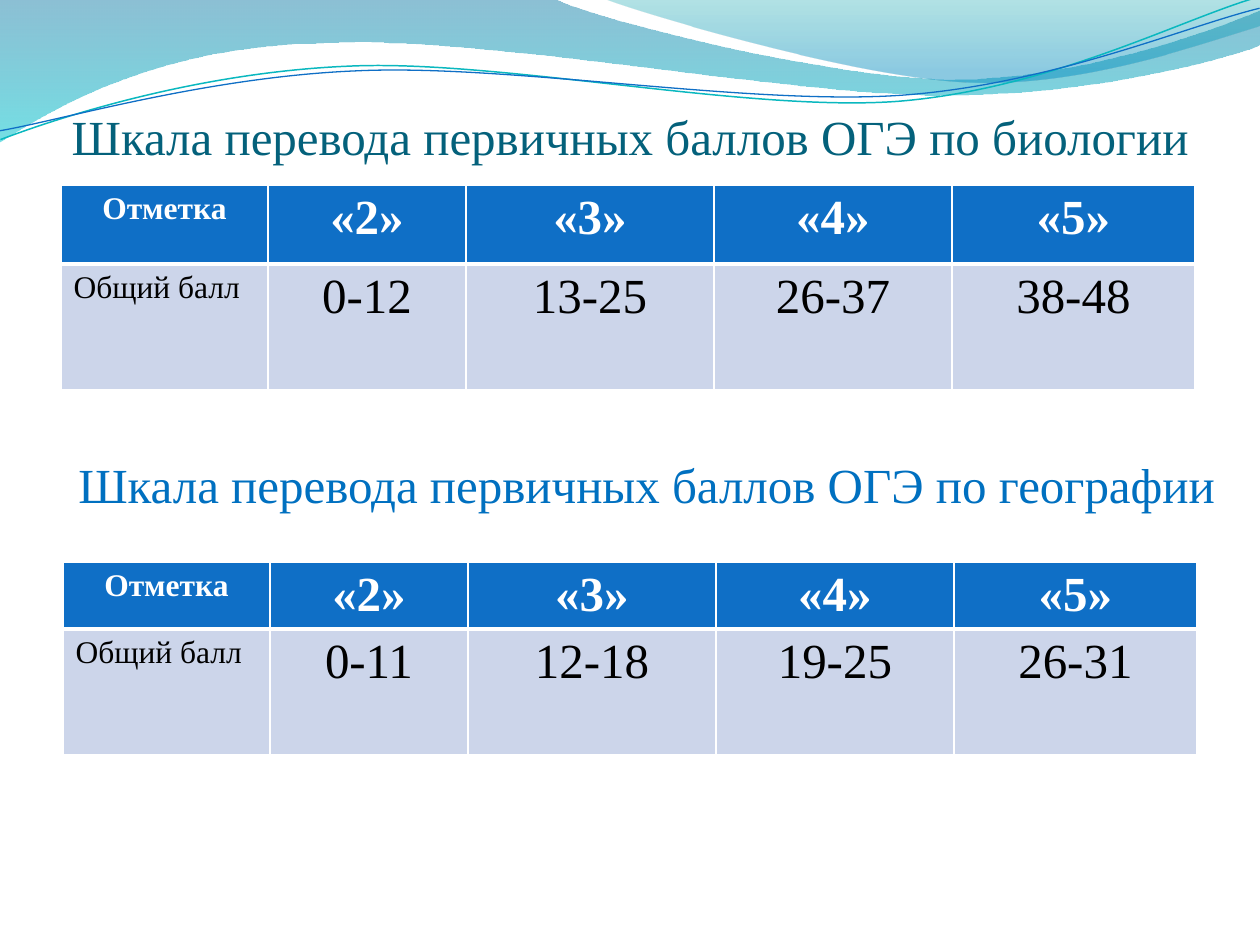
from lxml import etree
from pptx import Presentation
from pptx.dml.color import RGBColor
from pptx.enum.text import MSO_ANCHOR, MSO_AUTO_SIZE, PP_ALIGN
from pptx.oxml.ns import qn
from pptx.util import Pt

PX = 914400 / 126
CENTER, JUSTIFY = PP_ALIGN.CENTER, PP_ALIGN.JUSTIFY
BOTTOM = MSO_ANCHOR.BOTTOM
NO_AUTOFIT = MSO_AUTO_SIZE.NONE
FONT = "Times New Roman"
WHITE = RGBColor(0xFF, 0xFF, 0xFF)
BLACK = RGBColor(0, 0, 0)
BLUE = RGBColor(0x0F, 0x6F, 0xC6)
PALE_BLUE = RGBColor(0xCC, 0xD5, 0xEA)
DARK_TEAL = RGBColor(0x04, 0x61, 0x7B)
HEADING_BLUE = RGBColor(0x00, 0x70, 0xC0)
TURQUOISE = RGBColor(0x0A, 0xB8, 0xBF)
WAVE_TOP = RGBColor(0x00, 0x74, 0xA1)
WAVE_BOTTOM = RGBColor(0x00, 0xC6, 0xCF)
CREST_TOP = RGBColor(0x00, 0xA1, 0xA9)
CREST_BOTTOM = RGBColor(0x00, 0x8B, 0xBF)


def px(*lengths):
    return [round(length * PX) for length in lengths]


def add_run(paragraph, text, size, color, bold=False):
    run = paragraph.add_run()
    run.text = text
    run.font.name = FONT
    run.font.size = Pt(size)
    run.font.bold = bold
    run.font.color.rgb = color


presentation = Presentation()
presentation.slide_width, presentation.slide_height = px(1260, 945)
slide = presentation.slides.add_slide(presentation.slide_layouts[5])
shapes = slide.shapes

waves = [
    ((0, 0), [
        [(554, -1)],
        [(600, 21), (837, 79), (955, 79)],
        [(1075, 79), (1207, 33), (1260, 11)],
        [(1261, 45)],
        [(1239, 55), (1096, 96), (940, 95)],
        [(784, 95), (481, 35), (324, 43)],
        [(163, 45), (58, 105), (-1, 142)],
    ], [(0, WAVE_TOP, 45), (1, WAVE_BOTTOM, 55)], None),
    ((604, -1), [
        [(641, 14), (859, 78), (969, 82)],
        [(1086, 87), (1211, 40), (1260, 26)],
        [(1260, 0)],
    ], [(0, CREST_TOP, 30), (0.8, CREST_BOTTOM, 45)], None),
    ((-2, 110), [
        [(59, 90), (199, 52), (350, 53)],
        [(499, 53), (745, 118), (896, 114)],
        [(1049, 109), (1184, 45), (1260, 27)],
    ], None, (TURQUOISE, 0.85)),
    ((-2, 101), [
        [(57, 94), (207, 57), (357, 58)],
        [(509, 58), (750, 112), (902, 108)],
        [(1052, 104), (1189, 52), (1262, 38)],
    ], None, (BLUE, 0.75)),
]
for start, segments, stops, stroke in waves:
    points = [tuple(px(*point)) for segment in segments for point in segment]
    builder = shapes.build_freeform(*px(*start), scale=1.0)
    builder.add_line_segments(points, close=stops is not None)
    wave = builder.convert_to_shape()
    wave.shadow.inherit = False
    sides = iter(list(wave.element.spPr.iter(qn("a:lnTo"))))
    for segment in segments:
        side = next(sides)
        if len(segment) == 3:
            curve = etree.Element(qn("a:cubicBezTo"))
            side.addprevious(curve)
            for corner in (side, next(sides), next(sides)):
                curve.append(corner[0])
                corner.getparent().remove(corner)
    if stops:
        wave.line.fill.background()
        wave.fill.gradient()
        wave.fill.gradient_angle = 270
        for stop, (position, color, _) in zip(wave.fill.gradient_stops, stops):
            stop.position = position
            stop.color.rgb = color
        color_elements = wave.element.spPr.iter(qn("a:srgbClr"))
        for color_element, (_, _, opacity) in zip(color_elements, stops):
            etree.SubElement(color_element, qn("a:alpha"), val=str(opacity * 1000))
    else:
        wave.fill.background()
        wave.line.color.rgb, wave.line.width = stroke[0], Pt(stroke[1])
        wave.rotation = -2.7

title = shapes.title
title.element.getparent().append(title.element)
title.left, title.top, title.width, title.height = px(63, 96, 1134, 69)
frame = title.text_frame
frame.auto_size = NO_AUTOFIT
frame.word_wrap = True
frame.vertical_anchor = BOTTOM
frame.margin_left = frame.margin_right = frame.margin_bottom = 0
frame.margin_top = px(6)[0]
frame.paragraphs[0].alignment = CENTER
add_run(frame.paragraphs[0], "Шкала перевода первичных баллов ОГЭ по биологии", 28, DARK_TEAL)

header = ["Отметка", "«2»", "«3»", "«4»", "«5»"]
column_widths = px(207, 198, 248, 238, 243)
score_tables = [
    (61, 185, (79, 126), ["Общий балл", "0-12", "13-25", "26-37", "38-48"]),
    (63, 562, (66, 126), ["Общий балл", "0-11", "12-18", "19-25", "26-31"]),
]
for left, top, heights, scores in score_tables:
    table = shapes.add_table(2, 5, *px(left, top, 1134, sum(heights))).table
    for column, width in zip(table.columns, column_widths):
        column.width = width
    for row_index, texts in enumerate((header, scores)):
        is_header = row_index == 0
        table.rows[row_index].height = px(heights[row_index])[0]
        for column_index, text in enumerate(texts):
            cell = table.cell(row_index, column_index)
            properties = cell._tc.get_or_add_tcPr()
            for side in "LRTB":
                at_divider = side == ("B" if is_header else "T")
                border = etree.SubElement(
                    properties, qn(f"a:ln{side}"), w=str(Pt(3 if at_divider else 1)))
                border_fill = etree.SubElement(border, qn("a:solidFill"))
                etree.SubElement(border_fill, qn("a:srgbClr"), val=str(WHITE))
            cell.fill.solid()
            cell.fill.fore_color.rgb = BLUE if is_header else PALE_BLUE
            paragraph = cell.text_frame.paragraphs[0]
            is_label = column_index == 0
            paragraph.alignment = JUSTIFY if is_label and not is_header else CENTER
            add_run(paragraph, text, 18 if is_label else 28,
                    WHITE if is_header else BLACK, is_header)

heading = shapes.add_textbox(*px(66, 448, 1169, 72))
heading.text_frame.word_wrap = True
add_run(heading.text_frame.paragraphs[0],
        "Шкала перевода первичных баллов ОГЭ по географии", 28, HEADING_BLUE)

presentation.save("out.pptx")
